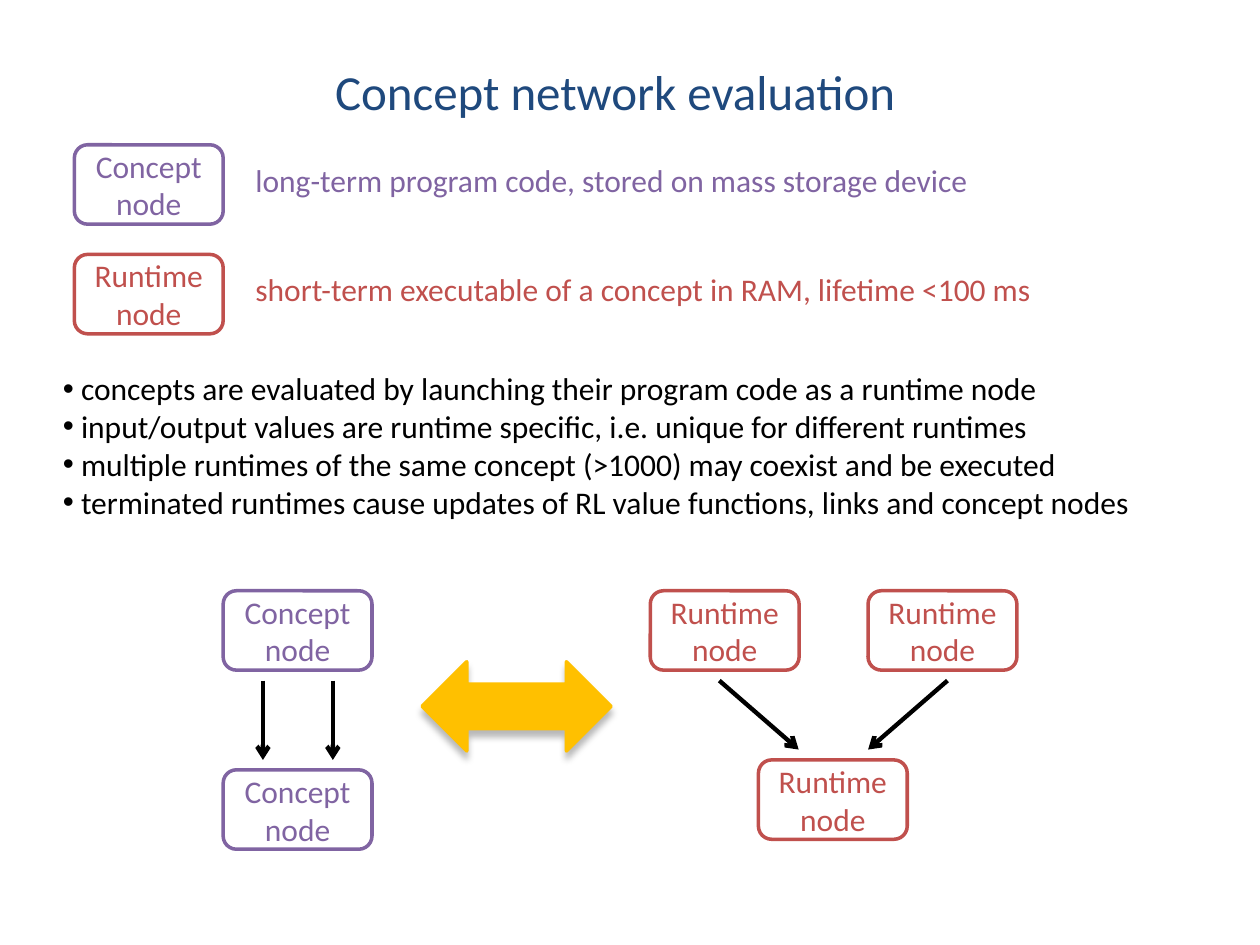
from lxml.etree import SubElement
from pptx import Presentation
from pptx.dml.color import RGBColor
from pptx.enum.shapes import MSO_CONNECTOR as Connector, MSO_SHAPE as Shape
from pptx.enum.text import MSO_ANCHOR as Anchor, PP_ALIGN as Align
from pptx.oxml.ns import qn
from pptx.util import Cm, Pt

NAVY = RGBColor(0x1F, 0x49, 0x7D)
PURPLE = RGBColor(0x80, 0x64, 0xA2)
RED = RGBColor(0xC0, 0x50, 0x4D)
AMBER = RGBColor(0xFF, 0xC0, 0x00)
WHITE = RGBColor(0xFF, 0xFF, 0xFF)
BLACK = RGBColor(0x00, 0x00, 0x00)

TITLE = "Concept network evaluation"
LEGEND = [
    ("long-term program code, stored on mass storage device", PURPLE, 3.12, 15.04),
    ("short-term executable of a concept in RAM, lifetime <100 ms", RED, 5.31, 16.36),
]
BULLETS = [
    " concepts are evaluated by launching their program code as a runtime node",
    " input/output values are runtime specific, i.e. unique for different runtimes",
    " multiple runtimes of the same concept (>1000) may coexist and be executed",
    " terminated runtimes cause updates of RL value functions, links and concept nodes",
]
NODE_SIZE = (3, 1.6)
NODES = [
    ("Concept\vnode", PURPLE, [(1.5, 2.92), (4.5, 11.91), (4.5, 15.52)]),
    ("Runtime\vnode", RED, [(1.5, 5.13), (13.11, 11.91), (17.5, 11.91), (15.29, 15.32)]),
]
LINK_TOP = 13.72
LINKS = [(5.3, 5.3, 15.32), (6.71, 6.71, 15.32), (14.5, 16.1, 15.11), (19.1, 17.5, 15.11)]
EXCHANGE_BOX = (8.51, 13.34, 3.81, 1.8)
BODY_FONT = {"name": "Calibri", "size": Pt(18)}
TITLE_FONT = {"name": "Calibri", "size": Pt(28)}


def write(frame, lines, color, font=BODY_FONT, align=Align.LEFT, bullet=None):
    for index, line in enumerate(lines):
        paragraph = frame.add_paragraph() if index else frame.paragraphs[0]
        paragraph.text = line
        paragraph.alignment = align
        for name, value in font.items():
            setattr(paragraph.font, name, value)
        paragraph.font.color.rgb = color
        for run in paragraph.runs:
            for name, value in font.items():
                setattr(run.font, name, value)
            run.font.color.rgb = color
        if bullet:
            properties = paragraph._p.get_or_add_pPr()
            bullet_font = SubElement(properties, qn("a:buFont"), typeface="Arial")
            bullet_font.addnext(properties.makeelement(qn("a:buChar"), {"char": bullet}))
            properties.insert(0, bullet_font)
            bullet_font.addnext(properties.find(qn("a:buChar")))


def add_text(slide, box, lines, color, **format_values):
    frame = slide.shapes.add_textbox(*map(Cm, box)).text_frame
    frame.word_wrap = False
    write(frame, lines, color, **format_values)


def add_filled(slide, kind, box, fill, line):
    shape = slide.shapes.add_shape(kind, *map(Cm, box))
    shape.shadow.inherit = False
    shape.fill.solid()
    shape.fill.fore_color.rgb = fill
    shape.line.color.rgb = line
    shape.line.width = Pt(2)
    return shape


def add_node(slide, position, label, color):
    shape = add_filled(slide, Shape.ROUNDED_RECTANGLE, position + NODE_SIZE, WHITE, color)
    shape.text_frame.vertical_anchor = Anchor.MIDDLE
    shape.text_frame.word_wrap = True
    write(shape.text_frame, [label], color, align=Align.CENTER)


def add_link(slide, start, end, bottom):
    link = slide.shapes.add_connector(
        Connector.STRAIGHT, Cm(start), Cm(LINK_TOP), Cm(end), Cm(bottom)
    )
    link.line.color.rgb = BLACK
    link.line.width = Pt(2.5)
    SubElement(link.line._get_or_add_ln(), qn("a:tailEnd"), type="arrow")
    SubElement(link._element.spPr, qn("a:effectLst"))


def add_exchange_arrow(slide):
    arrow = add_filled(slide, Shape.LEFT_RIGHT_ARROW, EXCHANGE_BOX, AMBER, AMBER)
    effects = arrow._element.spPr.find(qn("a:effectLst"))
    shadow = SubElement(
        effects, qn("a:outerShdw"), blurRad=str(Pt(4)), dist=str(Pt(4)),
        dir="5400000", rotWithShape="0",
    )
    color = SubElement(shadow, qn("a:srgbClr"), val=str(BLACK))
    SubElement(color, qn("a:alpha"), val="28000")


def main():
    presentation = Presentation()
    presentation.slide_width, presentation.slide_height = Cm(25.4), Cm(19.05)
    slide = presentation.slides.add_slide(presentation.slide_layouts[6])
    slide.background.fill.solid()
    slide.background.fill.fore_color.rgb = WHITE

    add_text(slide, (6.43, 1.12, 11.94, 1.45), [TITLE], NAVY,
             font=TITLE_FONT, align=Align.CENTER)
    for text, color, top, width in LEGEND:
        add_text(slide, (4.9, top, width, 1.02), [text], color)
    add_text(slide, (1.02, 7.32, 22.28, 3.33), BULLETS, BLACK, bullet="•")
    for label, color, positions in NODES:
        for position in positions:
            add_node(slide, position, label, color)
    for link in LINKS:
        add_link(slide, *link)
    add_exchange_arrow(slide)
    presentation.save("out.pptx")


if __name__ == "__main__":
    main()
